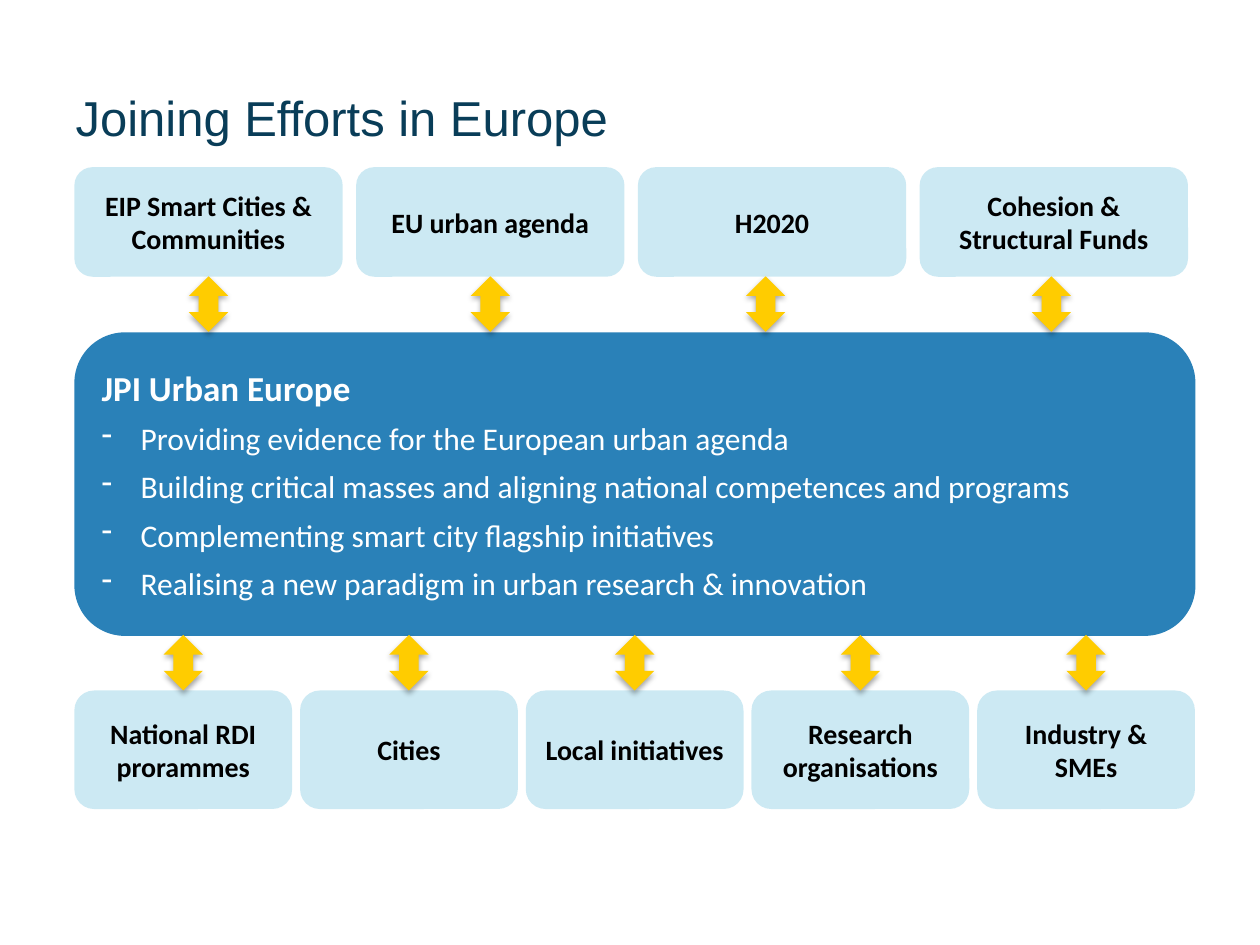
import pptx
import pptx.util
import pptx.dml.color
import pptx.enum.shapes
import pptx.enum.text
import pptx.oxml
import pptx.oxml.ns

Cm, Pt = pptx.util.Cm, pptx.util.Pt
RGB = pptx.dml.color.RGBColor
KIND = pptx.enum.shapes.MSO_SHAPE
ALIGN = pptx.enum.text.PP_ALIGN
MIDDLE = pptx.enum.text.MSO_ANCHOR.MIDDLE
qn = pptx.oxml.ns.qn

NAVY = RGB(0x09, 0x3D, 0x58)
PALE = RGB(0x9A, 0xD5, 0xE8)
BLUE = RGB(0x2A, 0x81, 0xB8)
GOLD = RGB(0xFF, 0xCC, 0x00)
BLACK = RGB(0, 0, 0)
WHITE = RGB(0xFF, 0xFF, 0xFF)

TITLE = "Joining Efforts in Europe"
HEAD = "JPI Urban Europe"
POINTS = [
    "Providing evidence for the European urban agenda",
    "Building critical masses and aligning national competences and programs",
    "Complementing smart city flagship initiatives",
    "Realising a new paradigm in urban research & innovation",
]
LEFT = 1.5
ROWS = [
    {"top": 3.37, "wide": 5.41, "high": 2.21, "step": 5.68, "arrow": 5.57,
     "items": [("EIP Smart Cities & Communities", 0), ("EU urban agenda", 0),
               ("H2020", -0.13), ("Cohesion &\nStructural Funds", -0.05)]},
    {"top": 13.92, "wide": 4.39, "high": 2.39, "step": 4.55, "arrow": 12.8,
     "items": [("National RDI prorammes", 0), ("Cities", 0),
               ("Local initiatives", 0), ("Research organisations", 0),
               ("Industry & SMEs", 0)]},
]
ARROW = (0.79, 1.12)
NS = 'xmlns:a="http://schemas.openxmlformats.org/drawingml/2006/main"'
SHADOW = (f'<a:effectLst {NS}><a:outerShdw blurRad="40000" dist="23000" '
          'dir="5400000" rotWithShape="0"><a:srgbClr val="000000">'
          '<a:alpha val="35000"/></a:srgbClr></a:outerShdw></a:effectLst>')


def add(slide, kind, place, color):
    shape = slide.shapes.add_shape(kind, *map(Cm, place))
    shape.shadow.inherit = False
    shape.fill.solid()
    shape.fill.fore_color.rgb = color
    shape.line.fill.background()
    return shape


def style(para, name, size, color, bold=False):
    for run in para.runs:
        font = run.font
        font.name, font.size, font.bold = name, Pt(size), bold
        font.color.rgb = color


def write(shape, text, align):
    frame = shape.text_frame
    frame.text = text
    frame.word_wrap = True
    frame.vertical_anchor = MIDDLE
    for para in frame.paragraphs:
        para.alignment = align
    return frame.paragraphs


def label(slide, text, place):
    box = add(slide, KIND.ROUNDED_RECTANGLE, place, PALE)
    tint = next(box.fill._xPr.iter(qn("a:srgbClr")))
    tint.append(pptx.oxml.parse_xml(f'<a:alpha {NS} val="50000"/>'))
    for para in write(box, text, ALIGN.CENTER):
        style(para, "Calibri", 16, BLACK, True)


def arrow(slide, mid, top):
    wide, high = ARROW
    place = (mid - wide / 2, top, wide, high)
    shape = add(slide, KIND.UP_DOWN_ARROW, place, GOLD)
    props = shape.element.spPr
    props.replace(props.find(qn("a:effectLst")), pptx.oxml.parse_xml(SHADOW))


def center(slide):
    box = add(slide, KIND.ROUNDED_RECTANGLE, (LEFT, 6.7, 22.6, 6.12), BLUE)
    head, *points = write(box, "\n".join([HEAD] + POINTS), ALIGN.LEFT)
    style(head, "Calibri", 20, WHITE, True)
    for para in points:
        props = para._p.get_or_add_pPr()
        props.set("marL", str(Cm(0.79)))
        props.set("indent", str(-Cm(0.79)))
        props.append(pptx.oxml.parse_xml(f'<a:buChar {NS} char="-"/>'))
        para.space_before = Pt(6)
        style(para, "Calibri", 18, WHITE)


def main():
    deck = pptx.Presentation()
    deck.slide_width, deck.slide_height = Cm(25.4), Cm(19.05)
    slide = deck.slides.add_slide(deck.slide_layouts[5])
    title = slide.shapes.title
    title.left, title.top = Cm(1.27), Cm(0.76)
    title.width, title.height = Cm(22.86), Cm(3.18)
    style(write(title, TITLE, ALIGN.LEFT)[0], "Arial", 28, NAVY)
    center(slide)
    for row in ROWS:
        for i, (text, shift) in enumerate(row["items"]):
            left = LEFT + i * row["step"]
            label(slide, text, (left, row["top"], row["wide"], row["high"]))
            arrow(slide, left + row["wide"] / 2 + shift, row["arrow"])
    deck.save("out.pptx")


if __name__ == "__main__":
    main()
